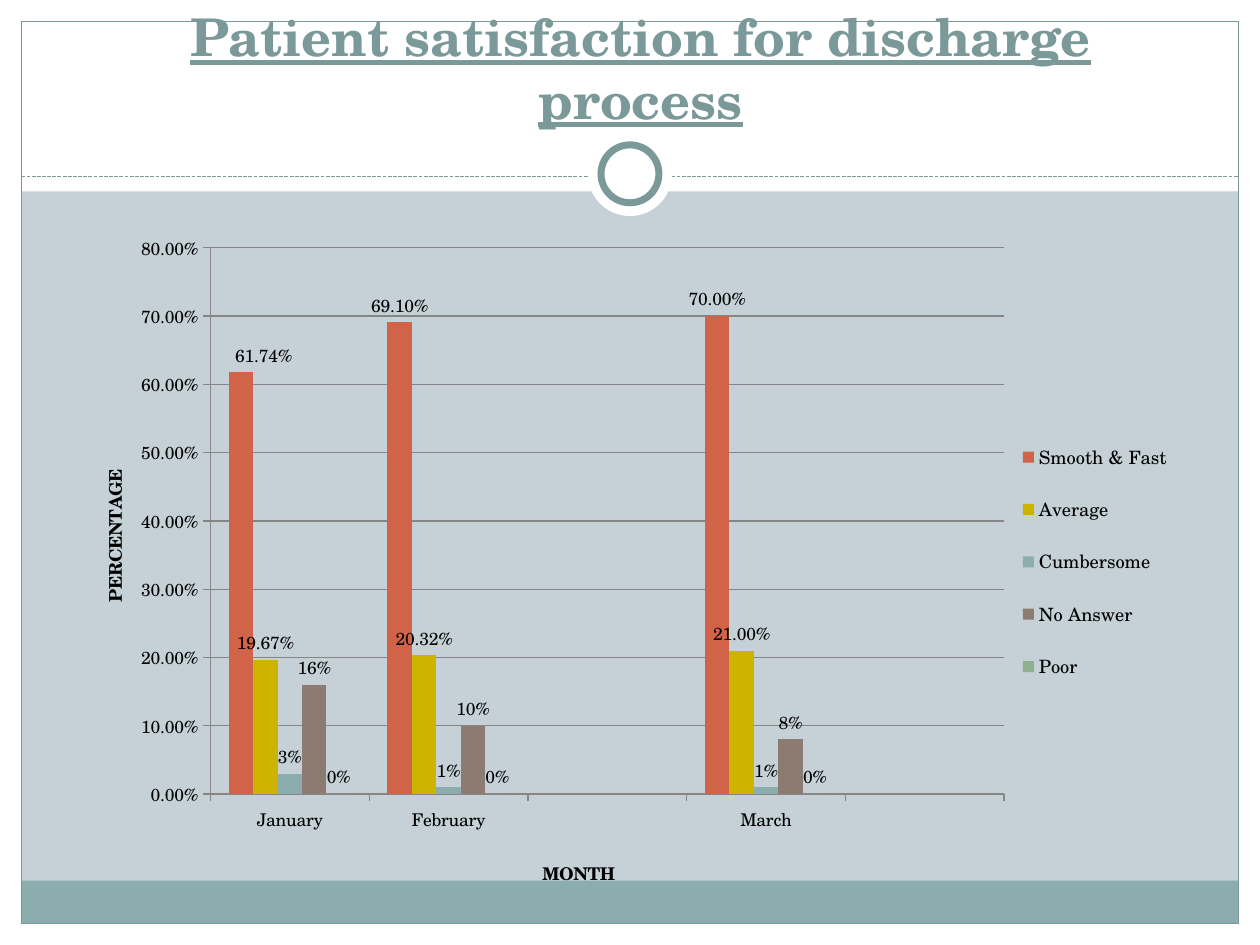
from collections import namedtuple

from lxml.etree import SubElement
from pptx import Presentation
from pptx.chart.data import CategoryChartData
from pptx.dml.color import RGBColor
from pptx.enum.chart import XL_CHART_TYPE, XL_LABEL_POSITION, XL_LEGEND_POSITION, XL_TICK_MARK
from pptx.enum.dml import MSO_LINE
from pptx.enum.shapes import MSO_CONNECTOR, MSO_SHAPE
from pptx.enum.text import MSO_ANCHOR, PP_ALIGN
from pptx.oxml import parse_xml
from pptx.oxml.ns import nsdecls, qn
from pptx.util import Inches, Pt

FONT = "TeX Gyre Schola"
WHITE = RGBColor(0xFF, 0xFF, 0xFF)
BLACK = RGBColor(0, 0, 0)
PALE_BLUE = RGBColor(0xC5, 0xD1, 0xD7)
TEAL = RGBColor(0x8C, 0xAD, 0xAE)
DARK_TEAL = RGBColor(0x7C, 0x99, 0x9A)
GRAY = RGBColor(0x86, 0x86, 0x86)
RED = RGBColor(0xD1, 0x63, 0x49)
YELLOW = RGBColor(0xCC, 0xB4, 0x00)
BROWN = RGBColor(0x8C, 0x7B, 0x70)
GREEN = RGBColor(0x8F, 0xB0, 0x8C)

Box = namedtuple("Box", "left top width height")
MONTHS = ["January", "February", "", "March", ""]
ANSWERS = [
    ("Smooth & Fast", [0.6174, 0.691, None, 0.7, None], "0.00%", RED),
    ("Average", [0.1967, 0.2032, None, 0.21, None], "0.00%", YELLOW),
    ("Cumbersome", [0.03, 0.01, None, 0.01, None], "0%", TEAL),
    ("No Answer", [0.16, 0.1, None, 0.08, None], "0%", BROWN),
    ("Poor", [0, 0, None, 0, None], "0%", GREEN),
]


def set_font(font, size=10, bold=False, underline=False, color=BLACK):
    font.name = FONT
    font.size = Pt(size)
    font.bold = bold
    font.underline = underline
    font.color.rgb = color


def write_text(frame, text, align=PP_ALIGN.CENTER, **style):
    para = frame.paragraphs[0]
    para.alignment = align
    span = para.add_run()
    span.text = text
    set_font(span.font, **style)


def add_part(page, kind, box, fill=None, line=None, line_width=0.75):
    part = page.shapes.add_shape(kind, *map(Inches, box))
    part.shadow.inherit = False
    if fill is None:
        part.fill.background()
    else:
        part.fill.solid()
        part.fill.fore_color.rgb = fill
    if line is None:
        part.line.fill.background()
    else:
        part.line.color.rgb = line
        part.line.width = Pt(line_width)


def add_circle(page, center, size, **style):
    box = Box(center[0] - size / 2, center[1] - size / 2, size, size)
    add_part(page, MSO_SHAPE.OVAL, box, **style)


def add_frame(page, box, edge=0.17, header=1.52, divider=1.4, footer=0.34):
    right, bottom = box.left + box.width, box.top + box.height
    margins = [
        Box(box.left, bottom - edge, box.width, edge),
        Box(box.left, box.top, box.width, header),
        Box(box.left, box.top, edge, box.height),
        Box(right - edge, box.top, edge, box.height),
    ]
    for margin in margins:
        add_part(page, MSO_SHAPE.RECTANGLE, margin, fill=WHITE)
    inner = Box(box.left + edge, box.top + edge, box.width - 2 * edge, box.height - 2 * edge)
    band = inner._replace(top=bottom - edge - footer, height=footer)
    add_part(page, MSO_SHAPE.RECTANGLE, band, fill=TEAL)
    add_part(page, MSO_SHAPE.RECTANGLE, inner, line=DARK_TEAL)
    rule = page.shapes.add_connector(
        MSO_CONNECTOR.STRAIGHT, Inches(inner.left), Inches(divider),
        Inches(inner.left + inner.width), Inches(divider))
    rule.line.color.rgb = DARK_TEAL
    rule.line.width = Pt(0.75)
    rule.line.dash_style = MSO_LINE.SQUARE_DOT
    SubElement(rule._element.spPr, qn("a:effectLst"))
    center = (box.left + box.width / 2, divider - 0.02)
    add_circle(page, center, 0.67, fill=WHITE)
    add_circle(page, center, 0.46, fill=WHITE, line=DARK_TEAL, line_width=4)


def add_title(page, box, text):
    title = page.shapes.title
    title.left, title.top, title.width, title.height = map(Inches, box)
    page.shapes._spTree.append(title._element)
    frame = title.text_frame
    frame.word_wrap = True
    frame.vertical_anchor = MSO_ANCHOR.BOTTOM
    frame.margin_bottom = Inches(0.52)
    write_text(frame, text, size=29.7, bold=True, underline=True, color=DARK_TEAL)


def make_layout(inner=False, **places):
    target = '<c:layoutTarget val="inner"/>' if inner else ""
    modes = "".join(f'<c:{key}Mode val="edge"/>' for key in places if key in "xy")
    values = "".join(f'<c:{key} val="{value}"/>' for key, value in places.items())
    return parse_xml(f'<c:layout {nsdecls("c")}><c:manualLayout>{target}{modes}{values}'
                     "</c:manualLayout></c:layout>")


def place(element, before, layout):
    for old in element.findall(qn("c:layout")):
        element.remove(old)
    following = [child for child in element if child.tag in map(qn, before)]
    following[0].addprevious(layout)


def format_axis(axis, title, x, y):
    axis.major_tick_mark = XL_TICK_MARK.OUTSIDE
    axis.minor_tick_mark = XL_TICK_MARK.NONE
    axis.format.line.color.rgb = GRAY
    set_font(axis.tick_labels.font)
    write_text(axis.axis_title.text_frame, title, bold=True)
    place(axis.axis_title._element, ["c:overlay"], make_layout(x=x, y=y))


def format_series(series, number_format, color):
    series.format.fill.solid()
    series.format.fill.fore_color.rgb = color
    series.invert_if_negative = False
    labels = series.data_labels
    labels.show_value = True
    labels.number_format = number_format
    labels.number_format_is_linked = False
    labels.position = XL_LABEL_POSITION.OUTSIDE_END
    set_font(labels.font)


def shift_label(point, x):
    label = point.data_label
    set_font(label.font)
    label.position = XL_LABEL_POSITION.OUTSIDE_END
    index = label._dLbl.find(qn("c:idx"))
    index.addnext(parse_xml(f'<c:numFmt {nsdecls("c")} formatCode="0.00%" sourceLinked="0"/>'))
    index.addnext(parse_xml(f'<c:layout {nsdecls("c")}><c:manualLayout><c:x val="{x}"/>'
                            '<c:y val="0"/></c:manualLayout></c:layout>'))


def add_satisfaction_chart(page, box):
    data = CategoryChartData()
    data.categories = MONTHS
    for name, values, number_format, color in ANSWERS:
        data.add_series(name, values, number_format)
    chart = page.shapes.add_chart(
        XL_CHART_TYPE.COLUMN_CLUSTERED, *map(Inches, box), data).chart
    set_font(chart.font)
    chart.has_title = False
    plot = chart.plots[0]
    plot.vary_by_categories = False
    plot.gap_width = 150
    plot.overlap = 0
    for series, (name, values, number_format, color) in zip(plot.series, ANSWERS):
        format_series(series, number_format, color)
    shift_label(plot.series[0].points[0], 0.02)

    format_axis(chart.category_axis, "MONTH", 0.42, 0.93)
    format_axis(chart.value_axis, "PERCENTAGE", 0.03, 0.36)
    chart.value_axis.minimum_scale = 0
    chart.value_axis.maximum_scale = 0.8
    chart.value_axis.major_unit = 0.1
    chart.value_axis.tick_labels.number_format = "0.00%"
    chart.value_axis.tick_labels.number_format_is_linked = False
    chart.value_axis.major_gridlines.format.line.color.rgb = GRAY

    chart.has_legend = True
    chart.legend.position = XL_LEGEND_POSITION.RIGHT
    chart.legend.include_in_layout = False
    set_font(chart.legend.font, size=10.5)
    place(chart.legend._element, ["c:overlay"], make_layout(x=0.83, y=0.29, w=0.16, h=0.42))
    area = chart._chartSpace.chart.plotArea
    place(area, ["c:barChart"], make_layout(inner=True, x=0.13, y=0.04, w=0.7, h=0.8))


def main():
    deck = Presentation()
    deck.slide_width, deck.slide_height = Inches(10), Inches(7.5)
    page = deck.slides.add_slide(deck.slide_layouts[5])
    page.background.fill.solid()
    page.background.fill.fore_color.rgb = PALE_BLUE
    add_frame(page, Box(0, 0, 10, 7.5))
    add_title(page, Box(0.67, -0.25, 8.83, 1.8), "Patient satisfaction for discharge process")
    add_satisfaction_chart(page, Box(0.5, 1.75, 9, 5.42))
    deck.save("out.pptx")


if __name__ == "__main__":
    main()
